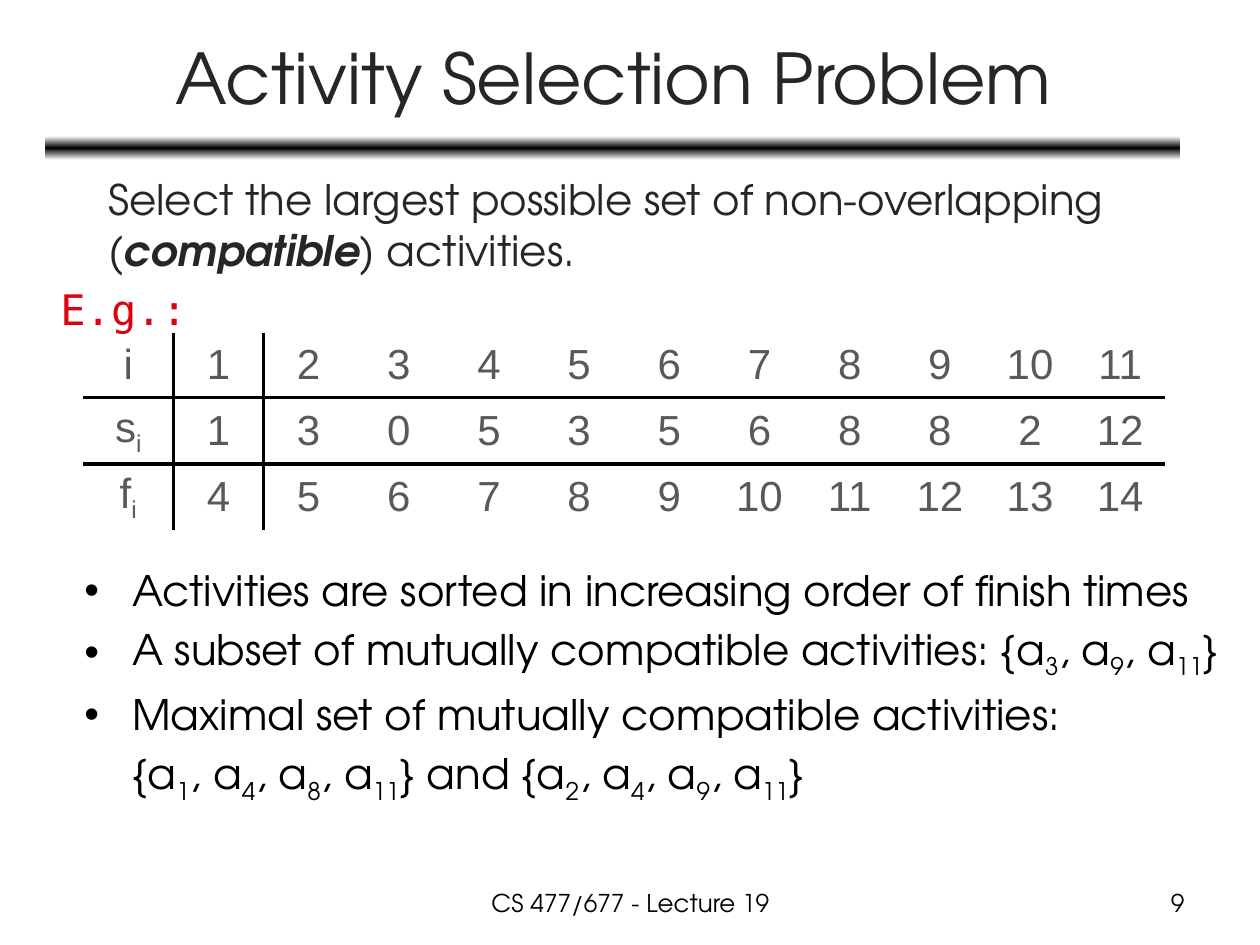
from copy import deepcopy
from dataclasses import dataclass

from lxml import etree
from pptx import Presentation
from pptx.dml.color import RGBColor
from pptx.enum.shapes import MSO_SHAPE
from pptx.enum.text import MSO_ANCHOR, MSO_AUTO_SIZE, PP_ALIGN
from pptx.oxml.ns import qn
from pptx.util import Inches, Pt

CENTER, RIGHT = PP_ALIGN.CENTER, PP_ALIGN.RIGHT
TOP, MIDDLE = MSO_ANCHOR.TOP, MSO_ANCHOR.MIDDLE
FIXED = MSO_AUTO_SIZE.NONE
ROUND = MSO_SHAPE.ROUNDED_RECTANGLE
TWO_LISTS = 3
NO_GRID = "{2D5ABB26-0587-4C30-8999-92F81FD0307C}"


@dataclass(frozen=True)
class Theme:
    sans: str = "TeX Gyre Adventor"
    mono: str = "DejaVu Sans Mono"
    grid: str = "Arial"
    black: str = "000000"
    white: str = "FFFFFF"
    ink: str = "262626"
    gray: str = "595959"
    red: str = "DD0111"
    head: int = 40
    body: int = 24
    foot: int = 14
    rule: float = 2.25
    hang: float = 0.38


T = Theme()


@dataclass(frozen=True)
class Style:
    size: int = T.body
    color: str = T.black
    font: str = T.sans


@dataclass(frozen=True)
class Bit:
    text: str
    sub: bool = False
    strong: bool = False


@dataclass(frozen=True)
class Line:
    bits: list[Bit]
    style: Style
    hang: bool = True
    bullet: bool = False


@dataclass(frozen=True)
class Note:
    text: str
    box: tuple
    align: PP_ALIGN


PLAIN = Style()
INTRO = Style(color=T.ink)
CELL = Style(color=T.gray, font=T.grid)


def place(shape, box: tuple) -> None:
    shape.left, shape.top, shape.width, shape.height = map(Inches, box)


def add_runs(para, bits: list[Bit], style: Style) -> None:
    for bit in bits:
        run = para.add_run()
        run.text = bit.text
        font = run.font
        font.name, font.size = style.font, Pt(style.size)
        font.color.rgb = RGBColor.from_string(style.color)
        if bit.strong:
            font.bold = font.italic = True
        if bit.sub:
            run._r.get_or_add_rPr().set("baseline", "-25000")


def set_frame(frame, anchor: MSO_ANCHOR) -> None:
    frame.word_wrap = True
    frame.auto_size = FIXED
    frame.vertical_anchor = anchor


def fill_list(shape, box: tuple, lines: list[Line]) -> None:
    place(shape, box)
    frame = shape.text_frame
    set_frame(frame, TOP)
    for n, line in enumerate(lines):
        para = frame.add_paragraph() if n else frame.paragraphs[0]
        props = para._p.get_or_add_pPr()
        props.set("marL", str(Inches(T.hang)))
        props.set("indent", str(Inches(-T.hang if line.hang else 0)))
        if line.bullet:
            etree.SubElement(props, qn("a:buChar")).set("char", "•")
        else:
            etree.SubElement(props, qn("a:buNone"))
        add_runs(para, line.bits, line.style)


def act_set(*ids: int) -> list[Bit]:
    """Runs for a set such as {a1, a4} with lowered indices."""
    bits = []
    for n, num in enumerate(ids):
        bits += [Bit(", a" if n else "{a"), Bit(str(num), sub=True)]
    return bits + [Bit("}")]


def add_edge(cell, side: str) -> None:
    edge = etree.SubElement(cell._tc.get_or_add_tcPr(), qn(f"a:ln{side}"))
    edge.set("w", str(Pt(T.rule)))
    fill = etree.SubElement(edge, qn("a:solidFill"))
    etree.SubElement(fill, qn("a:srgbClr")).set("val", T.black)


def add_grid(slide, box: tuple, rows: list[tuple]) -> None:
    shape = slide.shapes.add_table(len(rows), len(rows[0][1]) + 1,
                                   *map(Inches, box))
    table = shape.table
    table.first_row = table.horz_banding = False
    next(shape.element.iter(qn("a:tableStyleId"))).text = NO_GRID
    for r, (label, nums) in enumerate(rows):
        for c, bits in enumerate([label] + [[Bit(str(n))] for n in nums]):
            cell = table.cell(r, c)
            # Lines after the label column and below the index row
            edges = {"L": c == 1, "R": c == 0, "T": r == 1, "B": r == 0}
            for side, shown in edges.items():
                if shown:
                    add_edge(cell, side)
            cell.fill.background()
            cell.vertical_anchor = MIDDLE
            para = cell.text_frame.paragraphs[0]
            para.alignment = CENTER
            add_runs(para, bits, CELL)


def add_bar(slide, box: tuple) -> None:
    bar = slide.shapes.add_shape(ROUND, *map(Inches, box))
    bar.shadow.inherit = False
    bar.line.fill.background()
    bar.fill.gradient()
    bar.fill.gradient_angle = 90
    stops = next(bar.element.iter(qn("a:gsLst")))
    stops.append(deepcopy(stops[0]))
    for n, color in enumerate((T.white, T.black, T.white)):
        stop = bar.fill.gradient_stops[n]
        stop.position = n / 2
        stop.color.rgb = RGBColor.from_string(color)


def add_note(slide, note: Note) -> None:
    frame = slide.shapes.add_textbox(*map(Inches, note.box)).text_frame
    set_frame(frame, TOP)
    para = frame.paragraphs[0]
    para.alignment = note.align
    add_runs(para, [Bit(note.text)], Style(size=T.foot))


def main() -> None:
    deck = Presentation()
    deck.slide_width, deck.slide_height = Inches(10), Inches(7.5)
    slide = deck.slides.add_slide(deck.slide_layouts[TWO_LISTS])
    title, intro, facts = list(slide.placeholders)[:3]

    # Title and rule below it
    add_bar(slide, (0.36, 1.08, 9.01, 0.19))
    place(title, (0.37, 0.11, 9, 0.99))
    set_frame(title.text_frame, MIDDLE)
    head = title.text_frame.paragraphs[0]
    head.alignment = CENTER
    add_runs(head, [Bit("Activity Selection Problem")], Style(T.head, T.ink))

    # Task
    fill_list(intro, (0.38, 1.33, 8.82, 1.53), [
        Line([Bit("Select the largest possible set of non-overlapping ("),
              Bit("compatible", strong=True), Bit(") activities.")],
             INTRO, hang=False),
        Line([Bit("E.g.:")], Style(color=T.red, font=T.mono)),
    ])

    # Findings
    fill_list(facts, (0.57, 4.43, 9.29, 2.7), [
        Line([Bit("Activities are sorted in increasing order of finish times")],
             PLAIN, bullet=True),
        Line([Bit("A subset of mutually compatible activities: ")]
             + act_set(3, 9, 11), PLAIN, bullet=True),
        Line([Bit("Maximal set of mutually compatible activities:")],
             PLAIN, bullet=True),
        Line(act_set(1, 4, 8, 11) + [Bit(" and ")] + act_set(2, 4, 9, 11),
             PLAIN, hang=False),
    ])

    # Start and finish times
    low = Bit("i", sub=True)
    add_grid(slide, (0.66, 2.64, 8.59, 1.55), [
        ([Bit("i")], range(1, 12)),
        ([Bit("s"), low], (1, 3, 0, 5, 3, 5, 6, 8, 8, 2, 12)),
        ([Bit("f"), low], range(4, 15)),
    ])

    # Footer
    for note in (Note("CS 477/677 - Lecture 19", (3.42, 7, 3.17, 0.35), CENTER),
                 Note("9", (7.17, 7, 2.33, 0.35), RIGHT)):
        add_note(slide, note)

    deck.save("out.pptx")


if __name__ == "__main__":
    main()
